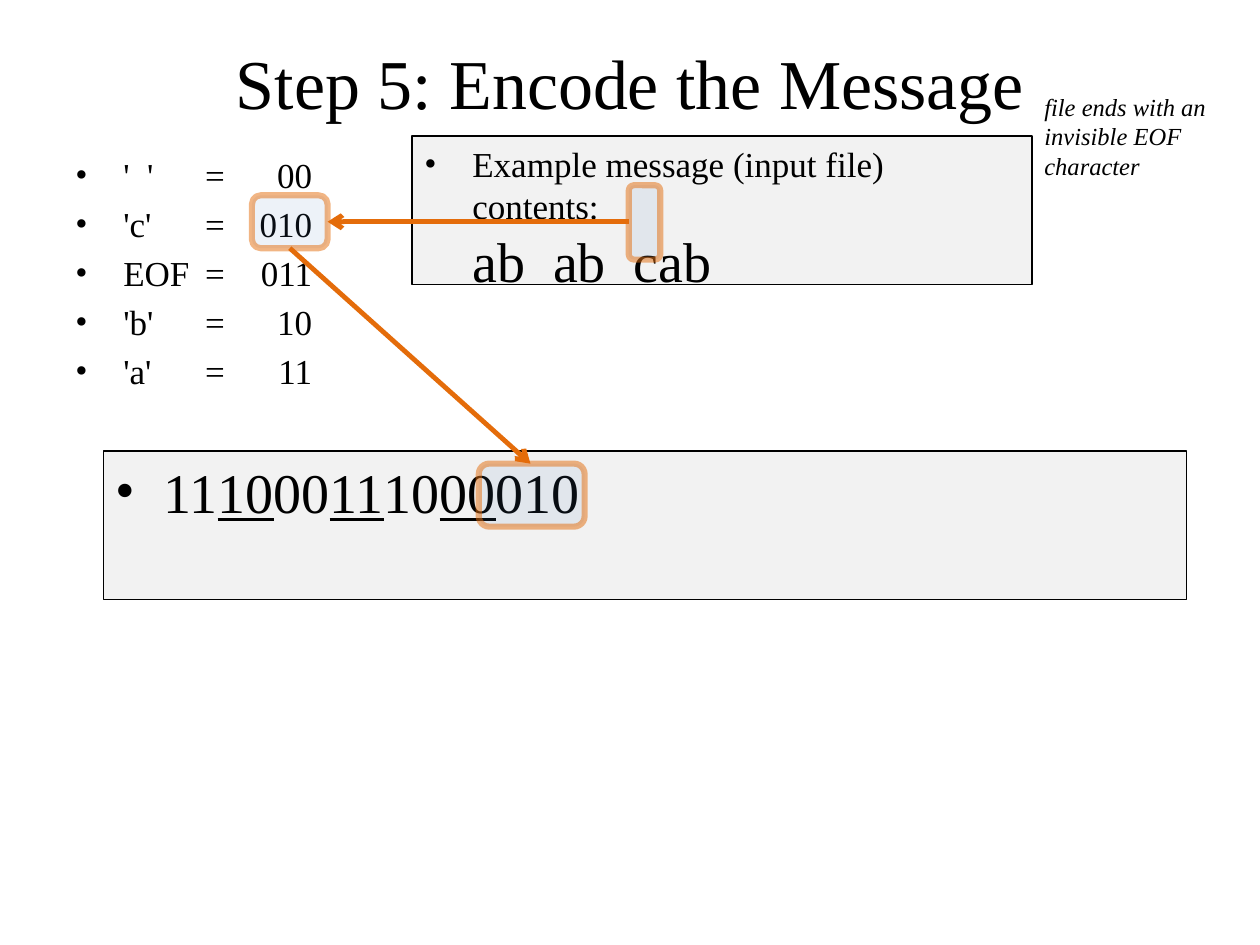
from lxml import etree
from pptx import Presentation
from pptx.dml.color import RGBColor
from pptx.enum import shapes as sh, text as tx
from pptx.oxml import ns
from pptx.util import Inches, Pt

BLACK = RGBColor(0, 0, 0)
GREY = RGBColor(0xF2, 0xF2, 0xF2)
BLUE = RGBColor(0x4F, 0x81, 0xBD)
ORANGE = RGBColor(0xE4, 0x6C, 0x0A)


def add(node, tag, **attrs):
    return etree.SubElement(node, ns.qn("a:" + tag), attrs)


class Deck:
    """Holds the style and the current slide, and draws each kind of element."""

    face = "Times New Roman"

    def __init__(self):
        self.prs = Presentation()
        self.prs.slide_width, self.prs.slide_height = Inches(10), Inches(7.5)
        self.slide = self.prs.slides.add_slide(self.prs.slide_layouts[5])

    def font(self, para, size, italic=None):
        font = para.font
        font.name, font.size, font.italic = self.face, Pt(size), italic
        font.color.rgb = BLACK

    def title(self, words, *box):
        shape = self.slide.shapes.title
        shape.left, shape.top, shape.width, shape.height = map(Inches, box)
        shape.text_frame.text = words
        shape.text_frame.vertical_anchor = tx.MSO_ANCHOR.MIDDLE
        para = shape.text_frame.paragraphs[0]
        para.alignment = tx.PP_ALIGN.CENTER
        self.font(para, 40)

    def text(self, words, *box):
        frame = self.slide.shapes.add_textbox(*map(Inches, box)).text_frame
        frame.word_wrap = True
        frame.text = words
        return frame

    def bullet(self, para, size, tabs=()):
        para.alignment = tx.PP_ALIGN.LEFT
        para.space_before = Pt(size * 0.2)
        props = para._p.get_or_add_pPr()
        props.set("marL", str(Inches(0.38)))
        props.set("indent", str(Inches(-0.38)))
        add(props, "buFont", typeface=self.face)
        add(props, "buChar", char="•")
        if tabs:
            stops = add(props, "tabLst")
            for pos, side in tabs:
                add(stops, "tab", pos=str(Inches(pos)), algn=side)
        self.font(para, size)

    def note(self, words, *box):
        self.font(self.text(words, *box).paragraphs[0], 14, True)

    def codes(self, pairs, *box):
        rows = "\n".join(f"{char}\t=\t{code}" for char, code in pairs)
        for para in self.text(rows, *box).paragraphs:
            self.bullet(para, 20, [(1.03, "l"), (1.88, "r")])

    def shape(self, kind, box, fill, line, width):
        shape = self.slide.shapes.add_shape(kind, *map(Inches, box))
        shape.shadow.inherit = False
        shape.fill.solid()
        shape.fill.fore_color.rgb = fill
        shape.line.color.rgb = line
        shape.line.width = Pt(width)
        return shape

    def panel(self, size, *box):
        shape = self.shape(sh.MSO_SHAPE.RECTANGLE, box, GREY, BLACK, 0.75)
        frame = shape.text_frame
        frame.word_wrap = True
        frame.vertical_anchor = tx.MSO_ANCHOR.TOP
        para = frame.paragraphs[0]
        self.bullet(para, size)
        return para

    def mark(self, *box):
        shape = self.shape(sh.MSO_SHAPE.ROUNDED_RECTANGLE, box, BLUE, ORANGE, 3.5)
        colors = shape._element.spPr.iter(ns.qn("a:srgbClr"))
        for color, alpha in zip(list(colors), ("10000", "50000")):
            add(color, "alpha", val=alpha)

    def arrow(self, *ends):
        line = self.slide.shapes.add_connector(
            sh.MSO_CONNECTOR.STRAIGHT, *map(Inches, ends))
        line.line.color.rgb = ORANGE
        line.line.width = Pt(2.75)
        add(line.line._get_or_add_ln(), "tailEnd", type="arrow")
        add(line._element.spPr, "effectLst")


def main():
    deck = Deck()
    deck.title("Step 5: Encode the Message", 0.5, 0.3, 9, 0.7)
    deck.codes([("'  '", "00"), ("'c'", "010"), ("EOF", "011"),
                ("'b'", "10"), ("'a'", "11")], 0.5, 1.17, 2.51, 2.25)

    para = deck.panel(20, 3.27, 1.08, 4.92, 1.18)
    para.add_run().text = "Example message (input file) contents:"
    para.add_line_break()
    run = para.add_run()
    run.text = "ab  ab  cab"
    run.font.size = Pt(32)
    deck.note("file ends with an invisible EOF character", 8.19, 0.68, 1.58, 0.81)
    deck.arrow(4.99, 1.76, 2.6, 1.76)
    deck.mark(4.99, 1.47, 0.25, 0.59)

    para = deck.panel(32, 0.82, 3.58, 8.6, 1.18)
    for i, code in enumerate(["11", "10", "00", "11", "10", "00", "010"]):
        run = para.add_run()
        run.text = code
        run.font.underline = i % 2 == 1
    deck.arrow(2.3, 1.97, 4.21, 3.68)
    deck.mark(2, 1.55, 0.6, 0.42)
    deck.mark(3.8, 3.68, 0.84, 0.5)
    deck.prs.save("out.pptx")


if __name__ == "__main__":
    main()
